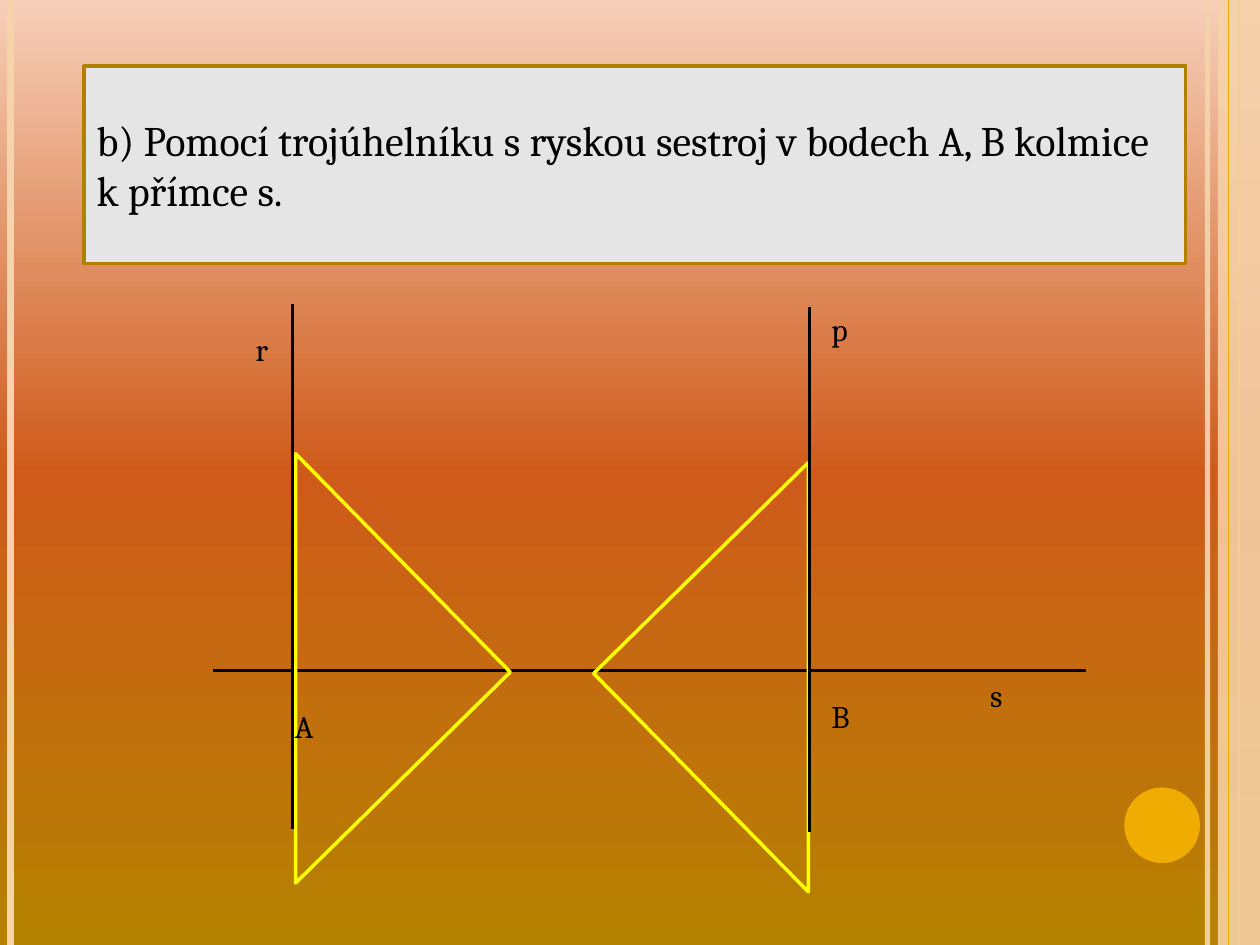
from copy import deepcopy

from lxml.etree import SubElement
from pptx import Presentation
from pptx.dml.color import RGBColor
from pptx.enum.shapes import MSO_CONNECTOR, MSO_SHAPE
from pptx.enum.text import MSO_ANCHOR, MSO_AUTO_SIZE, PP_ALIGN
from pptx.oxml.ns import qn
from pptx.util import Pt

BLACK = RGBColor(0x00, 0x00, 0x00)
YELLOW = RGBColor(0xFF, 0xFF, 0x00)
AMBER = RGBColor(0xF0, 0xAD, 0x00)
PEACH = RGBColor(0xF6, 0xD3, 0xAB)
LIGHT_GREY = RGBColor(0xE5, 0xE5, 0xE6)
OCHRE = RGBColor(0xB2, 0x80, 0x00)
SKY = [RGBColor(0xF6, 0xCF, 0xB9), RGBColor(0xCF, 0x5B, 0x1B), RGBColor(0xB4, 0x82, 0x00)]
WIDTH, HEIGHT = 720, 540

prs = Presentation()
prs.slide_width, prs.slide_height = Pt(WIDTH), Pt(HEIGHT)
slide = prs.slides.add_slide(prs.slide_layouts[5])
shapes = slide.shapes


def add_line(x1, y1, x2, y2, color, width):
    line = shapes.add_connector(MSO_CONNECTOR.STRAIGHT, Pt(x1), Pt(y1), Pt(x2), Pt(y2))
    line.line.color.rgb = color
    line.line.width = Pt(width)
    SubElement(line._element.spPr, qn("a:effectLst"))
    return line


def set_opacity(shape, percent):
    color = shape._element.spPr.find(".//" + qn("a:srgbClr"))
    SubElement(color, qn("a:alpha")).set("val", str(percent * 1000))


# Background: three colours from top to bottom
backdrop = slide.background.fill
backdrop.gradient()
backdrop.gradient_angle = 270
stop_list = slide._element.find(".//" + qn("a:gsLst"))
stop_list.append(deepcopy(stop_list[0]))
for stop, color, position in zip(backdrop.gradient_stops, SKY, (0, 0.5, 1)):
    stop.color.rgb = color
    stop.position = position

# Side stripes, band and dot
set_opacity(add_line(690, 0, 690, HEIGHT, PEACH, 3), 93)
add_line(6, 0, 6, HEIGHT, PEACH, 4.5)
add_line(708, 0, 708, HEIGHT, AMBER, 1.5)
band = shapes.add_shape(MSO_SHAPE.RECTANGLE, Pt(696), 0, Pt(24), Pt(HEIGHT))
band.fill.solid()
band.fill.fore_color.rgb = PEACH
set_opacity(band, 87)
add_line(702, 0, 702, HEIGHT, AMBER, 0.75)
dot = shapes.add_shape(MSO_SHAPE.OVAL, Pt(642.5), Pt(450), Pt(43.2), Pt(43.2))
dot.fill.solid()
dot.fill.fore_color.rgb = AMBER
for ornament in (band, dot):
    ornament.line.fill.background()
    ornament.shadow.inherit = False

# Task
task = shapes.title
box = {"left": Pt(48), "top": Pt(37.6), "width": Pt(629.5), "height": Pt(113)}
for name, value in box.items():
    setattr(task, name, value)
task.fill.solid()
task.fill.fore_color.rgb = LIGHT_GREY
task.line.color.rgb = OCHRE
task.line.width = Pt(2)
task.text_frame.text = "b) Pomocí trojúhelníku s ryskou sestroj v bodech A, B kolmice k přímce s."
frame_format = {"auto_size": MSO_AUTO_SIZE.NONE, "vertical_anchor": MSO_ANCHOR.MIDDLE, "word_wrap": True}
for name, value in frame_format.items():
    setattr(task.text_frame, name, value)
sentence = task.text_frame.paragraphs[0]
sentence.alignment = PP_ALIGN.LEFT
for name, value in {"name": "Cambria", "size": Pt(24)}.items():
    setattr(sentence.font, name, value)
sentence.font.color.rgb = BLACK

# Line s with the marks of points A and B
add_line(121.7, 383, 620.6, 383, BLACK, 1.5)
add_line(167, 378, 167, 394.5, BLACK, 1)
add_line(462.2, 378, 462.2, 400.3, BLACK, 1)

# Set squares, each with its perpendicular on top
for left, top, rotation, x, start, end in [
    (81.4, 295.9, 225.5, 167, 173.7, 474),
    (374.4, 301, 45.5, 462.7, 175.2, 475.6),
]:
    square = shapes.add_shape(MSO_SHAPE.RIGHT_TRIANGLE, Pt(left), Pt(top), Pt(175), Pt(172))
    square.rotation = rotation
    square.fill.background()
    square.line.color.rgb = YELLOW
    square.line.width = Pt(2)
    square.shadow.inherit = False
    add_line(x, start, x, end, BLACK, 1.5)

# Names of points and lines
for letter, left, top, width in [
    ("A", 161.3, 400.3, 22.3),
    ("B", 468, 394.6, 28),
    ("s", 558.7, 383, 39.6),
    ("r", 139, 185, 28),
    ("p", 468, 173.5, 33.8),
]:
    label = shapes.add_textbox(Pt(left), Pt(top), Pt(width), Pt(28.8)).text_frame
    label.word_wrap = True
    label.text = letter
    font = label.paragraphs[0].font
    for name, value in {"name": "Cambria", "size": Pt(18)}.items():
        setattr(font, name, value)
    font.color.rgb = BLACK

prs.save("out.pptx")
